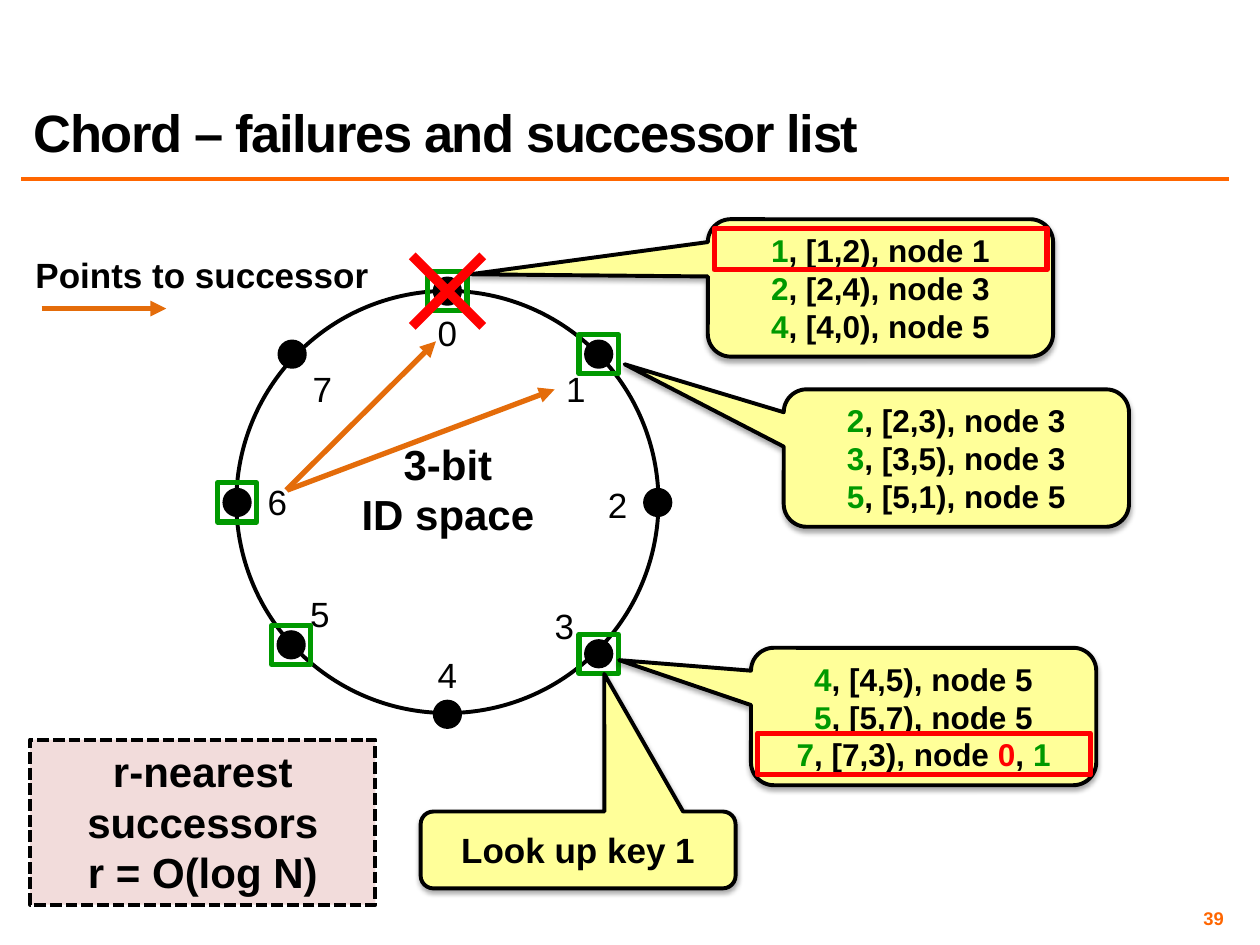
from lxml.etree import SubElement
from pptx import Presentation
from pptx.dml.color import RGBColor
from pptx.enum.dml import MSO_LINE
from pptx.enum.shapes import MSO_CONNECTOR, MSO_SHAPE
from pptx.enum.text import MSO_ANCHOR, PP_ALIGN
from pptx.oxml.ns import qn
from pptx.util import Cm, Pt

BLACK = RGBColor(0x00, 0x00, 0x00)
RED = RGBColor(0xFF, 0x00, 0x00)
GREEN = RGBColor(0x00, 0x99, 0x00)
ORANGE = RGBColor(0xFF, 0x66, 0x00)
ARROW = RGBColor(0xE4, 0x6C, 0x0A)
YELLOW = RGBColor(0xFF, 0xFF, 0x99)
PINK = RGBColor(0xF2, 0xDC, 0xDB)
FONT = "Arial"

# All positions and sizes are in centimetres.
TITLE = "Chord – failures and successor list"
RING_CENTRE, RING_SIZE = (9.02, 10.12), 8.51
DOT_SIZE, SQUARE_SIZE = 0.51, 0.79
LABEL_SIZE = (0.91, 1.12)
# identifier: dot centre, label centre
IDS = {
    "0": ((9.02, 5.87), (9.02, 6.71)),
    "1": ((12.07, 7.14), (11.61, 7.85)),
    "2": ((13.26, 10.13), (12.45, 10.19)),
    "3": ((12.07, 13.18), (11.38, 12.62)),
    "4": ((9.02, 14.4), (9.02, 13.61)),
    "5": ((5.87, 13.0), (6.45, 12.37)),
    "6": ((4.78, 10.13), (5.59, 10.13)),
    "7": ((5.89, 7.14), (6.5, 7.85)),
}
NODES = ["0", "1", "3", "5", "6"]

TABLE_SIZE = (6.96, 2.77)
# corner, callout tip, rows of (start, rest of entry)
FINGER_TABLES = [
    ((15.8, 7.85), (-0.961, -0.683),
     [("2", ", [2,3), node 3"), ("3", ", [3,5), node 3"), ("5", ", [5,1), node 5")]),
    ((14.27, 4.42), (-1.188, -0.099),
     [("1", ", [1,2), node 1"), ("2", ", [2,4), node 3"), ("4", ", [4,0), node 5")]),
    ((15.14, 13.06), (-0.882, -0.41),
     [("4", ", [4,5), node 5"), ("5", ", [5,7), node 5"),
      ("7", ", [7,3), node ", "0", ", ", "1")]),
]
ENTRY_COLOURS = [GREEN, BLACK, RED, BLACK, GREEN]
HIGHLIGHTS = [(14.4, 4.6), (15.27, 14.78)]
HIGHLIGHT_SIZE = (6.71, 0.84)
# tail, head
SUCCESSOR_ARROWS = [
    ((0.84, 6.22), (3.35, 6.22)),
    ((5.77, 9.88), (8.79, 6.88)),
    ((5.79, 9.88), (11.18, 7.85)),
]


def centred(centre, size):
    return centre[0] - size[0] / 2, centre[1] - size[1] / 2


def write(frame, paragraphs, size, bold=True, align=PP_ALIGN.CENTER):
    """Fill a text frame from lists of (text, colour) runs; a newline run is a break."""
    for index, runs in enumerate(paragraphs):
        paragraph = frame.add_paragraph() if index else frame.paragraphs[0]
        paragraph.alignment = align
        for text, colour in runs:
            if text == "\n":
                paragraph.add_line_break()
                continue
            run = paragraph.add_run()
            run.text = text
            run.font.name = FONT
            run.font.size = Pt(size)
            run.font.bold = bold
            run.font.color.rgb = colour


def add_text(slide, corner, size, paragraphs, points, wrap=False,
             anchor=MSO_ANCHOR.TOP, **style):
    box = slide.shapes.add_textbox(*map(Cm, (*corner, *size)))
    box.text_frame.word_wrap = wrap
    box.text_frame.vertical_anchor = anchor
    write(box.text_frame, paragraphs, points, **style)
    return box


def add_shape(slide, kind, corner, size, fill=None, line=BLACK, width=2.25):
    shape = slide.shapes.add_shape(kind, *map(Cm, (*corner, *size)))
    shape.shadow.inherit = False
    if fill is None:
        shape.fill.background()
    else:
        shape.fill.solid()
        shape.fill.fore_color.rgb = fill
    if line is None:
        shape.line.fill.background()
    else:
        shape.line.color.rgb = line
        shape.line.width = Pt(width)
    return shape


def add_line(slide, start, end, colour, width, arrow=False):
    line = slide.shapes.add_connector(MSO_CONNECTOR.STRAIGHT, *map(Cm, (*start, *end)))
    line.line.color.rgb = colour
    line.line.width = Pt(width)
    if arrow:
        SubElement(line.line._get_or_add_ln(), qn("a:tailEnd"), type="triangle")
    SubElement(line._element.spPr, qn("a:effectLst"))


def add_callout(slide, corner, size, tip, paragraphs, points):
    callout = add_shape(slide, MSO_SHAPE.ROUNDED_RECTANGULAR_CALLOUT, corner, size, YELLOW)
    callout.adjustments[0], callout.adjustments[1] = tip
    effects = callout._element.spPr.find(qn("a:effectLst"))
    shadow = SubElement(effects, qn("a:outerShdw"), blurRad=str(Pt(3.1)),
                        dist=str(Pt(1.8)), dir="5400000", rotWithShape="0")
    colour = SubElement(shadow, qn("a:srgbClr"), val=str(BLACK))
    SubElement(colour, qn("a:alpha"), val="35000")
    callout.text_frame.vertical_anchor = MSO_ANCHOR.MIDDLE
    write(callout.text_frame, paragraphs, points)


def add_frame(slide):
    add_line(slide, (0.43, 3.61), (24.77, 3.61), ORANGE, 2)
    number = add_text(slide, (18.85, 18.21), (5.92, 0.58), [[("39", ORANGE)]], 10.5,
                      wrap=True, anchor=MSO_ANCHOR.MIDDLE, align=PP_ALIGN.RIGHT)
    frame = number.text_frame
    frame.margin_left = frame.margin_right = Cm(0.1)
    frame.margin_top = frame.margin_bottom = Cm(0.1)
    title = add_text(slide, (0.43, 0.43), (24.33, 2.97), [[(TITLE, BLACK)]], 30,
                     wrap=True, anchor=MSO_ANCHOR.BOTTOM, align=PP_ALIGN.LEFT)
    paragraph = title.text_frame.paragraphs[0]
    paragraph.line_spacing = 0.8
    paragraph.runs[0].font._element.set("spc", "-80")


def add_ring(slide):
    ring_size = (RING_SIZE, RING_SIZE)
    add_shape(slide, MSO_SHAPE.OVAL, centred(RING_CENTRE, ring_size), ring_size)
    add_text(slide, (7.01, 8.71), (4.04, 2.31),
             [[("3-bit", BLACK)], [("ID space", BLACK)]], 24)
    dot, square = (DOT_SIZE, DOT_SIZE), (SQUARE_SIZE, SQUARE_SIZE)
    for name, (centre, label_centre) in IDS.items():
        add_shape(slide, MSO_SHAPE.OVAL, centred(centre, dot), dot, BLACK)
        add_text(slide, centred(label_centre, LABEL_SIZE), LABEL_SIZE,
                 [[(name, BLACK)]], 20, bold=False)
    for name in NODES:
        add_shape(slide, MSO_SHAPE.RECTANGLE, centred(IDS[name][0], square), square,
                  line=GREEN, width=3)


def add_failure_cross(slide):
    size = (2.01, 2.01)
    cross = add_shape(slide, MSO_SHAPE.CROSS, centred(IDS["0"][0], size), size, RED, None)
    cross.adjustments[0] = 0.452
    cross.rotation = 45


def add_successor_note(slide):
    note = add_shape(slide, MSO_SHAPE.RECTANGLE, (0.61, 14.91), (6.96, 3.33), PINK)
    note.line.dash_style = MSO_LINE.SQUARE_DOT
    note.text_frame.vertical_anchor = MSO_ANCHOR.TOP
    write(note.text_frame,
          [[("r-nearest", BLACK), ("\n", BLACK), ("successors", BLACK)],
           [("r = O(log N)", BLACK)]], 24)


def main():
    presentation = Presentation()
    presentation.slide_width, presentation.slide_height = Cm(25.4), Cm(19.05)
    slide = presentation.slides.add_slide(presentation.slide_layouts[6])
    add_frame(slide)
    add_text(slide, (0.43, 4.98), (7.29, 1.12), [[("Points to successor", BLACK)]], 20)
    add_ring(slide)
    for corner, tip, rows in FINGER_TABLES:
        entries = [list(zip(row, ENTRY_COLOURS)) for row in rows]
        add_callout(slide, corner, TABLE_SIZE, tip, entries, 18)
    add_callout(slide, (8.48, 16.36), (6.35, 1.55), (0.083, -2.29),
                [[("Look up key 1", BLACK)]], 20)
    add_failure_cross(slide)
    for tail, head in SUCCESSOR_ARROWS:
        add_line(slide, tail, head, ARROW, 3, arrow=True)
    add_successor_note(slide)
    for corner in HIGHLIGHTS:
        add_shape(slide, MSO_SHAPE.RECTANGLE, corner, HIGHLIGHT_SIZE, line=RED, width=3)
    presentation.save("out.pptx")


if __name__ == "__main__":
    main()
